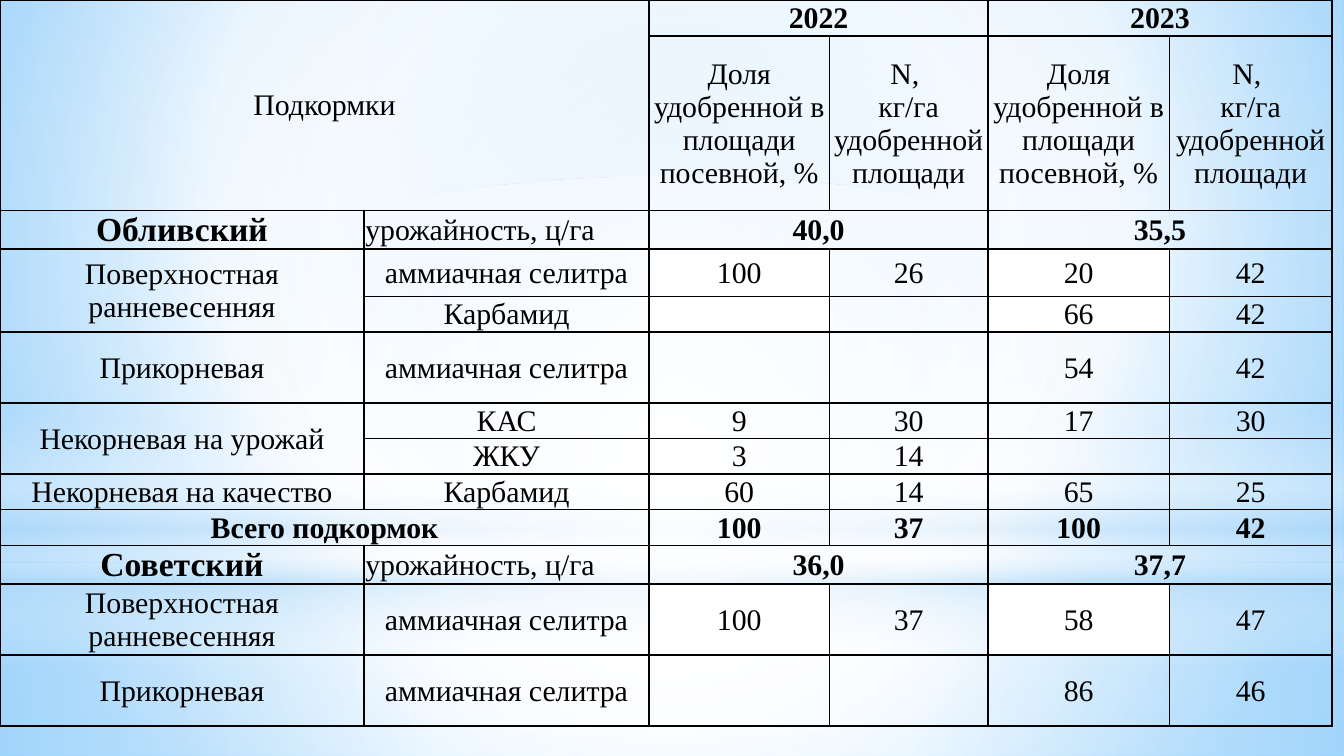
"""Build a slide with a table of fertilizer top dressings by district and year."""
import itertools

import pptx
import pptx.dml.color
import pptx.enum.shapes
import pptx.enum.text
import pptx.oxml
import pptx.oxml.ns
import pptx.util

Pt = pptx.util.Pt
RGBColor = pptx.dml.color.RGBColor
Shape = pptx.enum.shapes.MSO_SHAPE

BLACK = RGBColor(0x00, 0x00, 0x00)
WHITE = RGBColor(0xFF, 0xFF, 0xFF)
PALE = RGBColor(0xB4, 0xDC, 0xFA)
SKY = RGBColor(0x9E, 0xD5, 0xFF)
BLUE = RGBColor(0x5B, 0xB9, 0xFF)
FONT = "Times New Roman"

CENTER = (50, 50, 50, 50)
BACKGROUND = ([(0, SKY, 100), (60, WHITE, 100), (100, BLUE, 100)], (20, 10, 20, 60))
GLOWS = [
    (Shape.RECTANGLE, 301.5, 103.5, [(0, WHITE, 91), (37, WHITE, 76), (100, PALE, 79)], CENTER),
    (Shape.RECTANGLE, 0, 301.5, [(0, WHITE, 89), (48, WHITE, 62), (100, PALE, 79)], CENTER),
    (Shape.RECTANGLE, 222.5, 135, [(0, WHITE, 0), (29, WHITE, 30), (45, PALE, 40),
                                   (55, WHITE, 26), (65, PALE, 60), (100, WHITE, 0)], None),
    (Shape.OVAL, 94.5, 301.5, [(0, WHITE, 100), (56, WHITE, 0)], CENTER),
]

HEADING = "Подкормки"
YIELD = "урожайность, ц/га"
SHARE = "Доля удобренной в площади посевной, %"
DOSE = "N, \nкг/га удобренной площади"
EARLY = "Поверхностная\nранневесенняя"
ROOT = "Прикорневая"
NITRATE = "аммиачная селитра"
UREA = "Карбамид"
ROWS = [
    (19.4, [HEADING, None, "2022", None, "2023", None]),
    (93.4, [None, None, SHARE, DOSE, SHARE, DOSE]),
    (20, ["Обливский", YIELD, "40,0", None, "35,5", None]),
    (25.2, [EARLY, NITRATE, "100", "26", "20", "42"]),
    (19.4, [None, UREA, "", "", "66", "42"]),
    (38, [ROOT, NITRATE, "", "", "54", "42"]),
    (18.7, ["Некорневая на урожай", "КАС", "9", "30", "17", "30"]),
    (19.2, [None, "ЖКУ", "3", "14", "", ""]),
    (19.2, ["Некорневая на качество", UREA, "60", "14", "65", "25"]),
    (19.2, ["Всего подкормок", None, "100", "37", "100", "42"]),
    (20, ["Советский", YIELD, "36,0", None, "37,7", None]),
    (38, [EARLY, NITRATE, "100", "37", "58", "47"]),
    (38, [ROOT, NITRATE, "", "", "86", "46"]),
]
WIDTHS = [195, 152.8, 96.5, 85, 97.2, 87.1]
DISTRICT_ROWS = {2, 10}
BOLD_ROWS = {0, 9} | DISTRICT_ROWS
WHITE_ROWS = {3, 4, 11}
SHARE_COLUMNS = {2, 4}
SPLIT_ROWS = {3, 6}


def paint_gradient(element, stops, focus):
    """Replace the empty fill of an element with a gradient."""
    marks = "".join(
        f'<a:gs pos="{place * 1000}"><a:srgbClr val="{color}">'
        f'<a:alpha val="{alpha * 1000}"/></a:srgbClr></a:gs>'
        for place, color, alpha in stops)
    if focus:
        sides = " ".join(f'{side}="{share * 1000}"' for side, share in zip("ltrb", focus))
        direction = f'<a:path path="circle"><a:fillToRect {sides}/></a:path>'
    else:
        direction = '<a:lin ang="5400000" scaled="0"/>'
    gradient = pptx.oxml.parse_xml(
        f'<a:gradFill rotWithShape="1" {pptx.oxml.ns.nsdecls("a")}>'
        f'<a:gsLst>{marks}</a:gsLst>{direction}</a:gradFill>')
    empty = element.xpath(".//a:noFill")[0]
    empty.getparent().replace(empty, gradient)


def draw_borders(cell, weights):
    """Give a cell its left, right, top and bottom lines."""
    properties = cell._tc.get_or_add_tcPr()
    for side, weight in zip("LRTB", weights):
        properties.append(pptx.oxml.parse_xml(
            f'<a:ln{side} w="{Pt(weight)}" {pptx.oxml.ns.nsdecls("a")}>'
            f'<a:solidFill><a:srgbClr val="{BLACK}"/></a:solidFill></a:ln{side}>'))


def write_text(cell, text, size, bold, align):
    """Fill a cell with runs parted by line breaks."""
    para = cell.text_frame.paragraphs[0]
    para.alignment = align
    for index, line in enumerate(text.split("\n") if text else []):
        if index:
            para.add_line_break()
        span = para.add_run()
        span.text = line
        span.font.name = FONT
        span.font.size = Pt(size)
        span.font.bold = bold
        span.font.color.rgb = BLACK
    if not text:
        para._p.append(pptx.oxml.parse_xml(
            f'<a:endParaRPr sz="{size * 100}" {pptx.oxml.ns.nsdecls("a")}>'
            f'<a:latin typeface="{FONT}"/></a:endParaRPr>'))


def covered(values):
    """Count the leading covered cells."""
    return len(list(itertools.takewhile(lambda value: value is None, values)))


def main():
    """Draw the background and the table."""
    deck = pptx.Presentation()
    deck.slide_width, deck.slide_height = Pt(720), Pt(405)
    page = deck.slides.add_slide(deck.slide_layouts[6])
    page.background.fill.background()
    paint_gradient(page.element, *BACKGROUND)
    for kind, top, height, stops, focus in GLOWS:
        glow = page.shapes.add_shape(kind, Pt(0), Pt(top), Pt(720), Pt(height))
        glow.shadow.inherit = False
        glow.fill.background()
        paint_gradient(glow.element, stops, focus)
        glow.line.fill.background()

    heights = [height for height, _ in ROWS]
    grid = [values for _, values in ROWS]
    table = page.shapes.add_table(len(grid), len(WIDTHS), Pt(0), Pt(0),
                                  Pt(sum(WIDTHS)), Pt(sum(heights))).table
    table.first_row = table.horz_banding = False
    for column, width in zip(table.columns, WIDTHS):
        column.width = Pt(width)
    for row, height in zip(table.rows, heights):
        row.height = Pt(height)

    for row, values in enumerate(grid):
        for column, text in enumerate(values):
            cell = table.cell(row, column)
            thin_left = column - 1 in SHARE_COLUMNS and text is not None
            thin_right = column in SHARE_COLUMNS and values[column + 1] is not None
            thin_top = column > 0 and row - 1 in SPLIT_ROWS
            thin_bottom = column > 0 and row in SPLIT_ROWS
            draw_borders(cell, [0.5 if thin else 1 for thin in
                                (thin_left, thin_right, thin_top, thin_bottom)])
            cell.fill.background()
            if row in WHITE_ROWS and column in SHARE_COLUMNS:
                cell.fill.solid()
                cell.fill.fore_color.rgb = WHITE
            cell.margin_left = cell.margin_right = cell.margin_top = Pt(0.7)
            cell.margin_bottom = Pt(0)
            cell.vertical_anchor = pptx.enum.text.MSO_ANCHOR.MIDDLE
            size = 18 if row in DISTRICT_ROWS and column == 0 else 16
            bold = row in BOLD_ROWS and text not in (HEADING, YIELD)
            align = pptx.enum.text.PP_ALIGN.LEFT if text == YIELD else pptx.enum.text.PP_ALIGN.CENTER
            write_text(cell, text, size, bold, align)
            if text is not None:
                right = column + covered(values[column + 1:])
                below = [line[0] for line in grid[row + 1:]] if column == 0 else []
                bottom = row + covered(below)
                if (right, bottom) != (column, row):
                    cell.merge(table.cell(bottom, right))
    deck.save("out.pptx")


if __name__ == "__main__":
    main()
